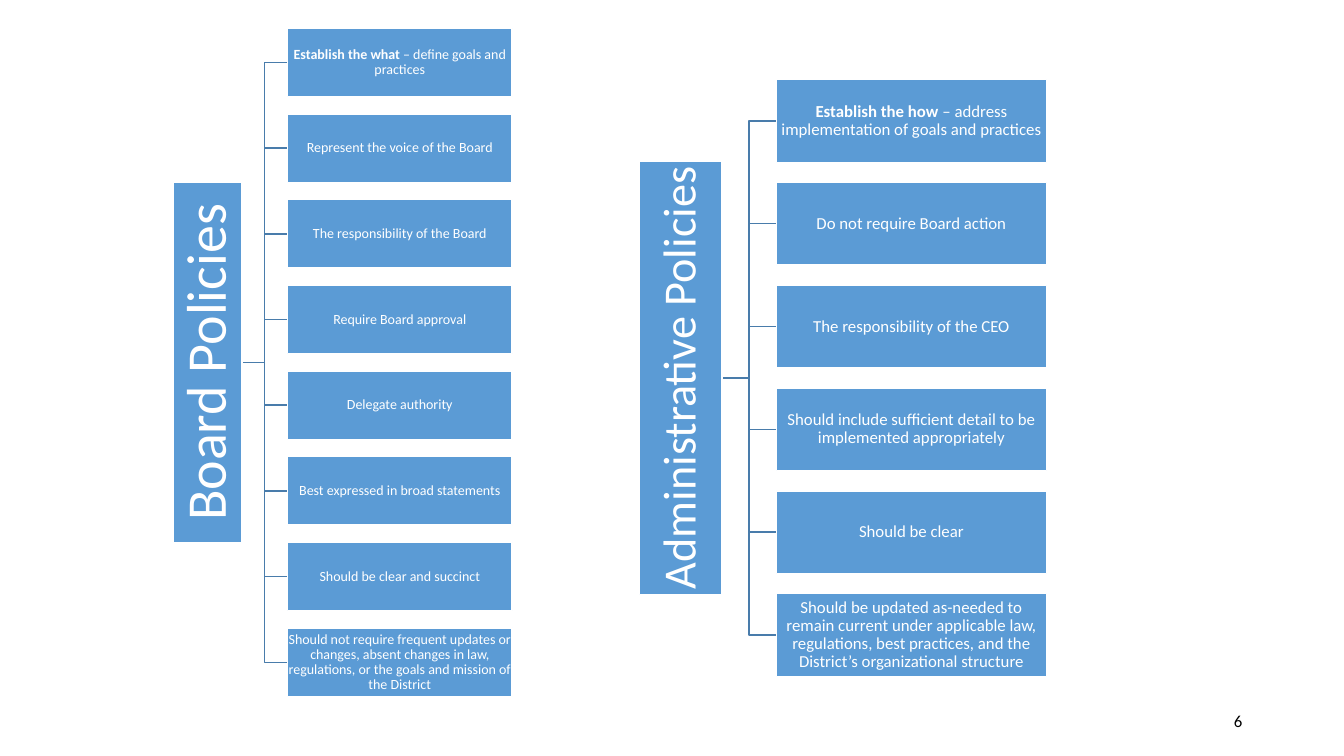
"""Build a slide with two horizontal trees comparing board and administrative policies."""
from dataclasses import dataclass

import pptx
import pptx.dml.color
import pptx.enum.shapes
import pptx.enum.text
import pptx.util

Inches = pptx.util.Inches
COLORS = {"box": "5B9BD5", "branch": "497CAB", "light": "FFFFFF", "dark": "000000"}
FONT = "Calibri"


@dataclass
class Tree:
    title: str
    title_size: int
    title_length: float
    title_inset: float
    title_right: float
    left: float
    top: float
    width: float
    height: float
    pitch: float
    text_size: int
    items: list[tuple[str, str]]


TREES = [
    Tree("Board Policies", 40, 3.58, 0.03, 2.4, 2.85, 0.28, 2.23, 0.68, 0.85, 10, [
        ("Establish the what", " – define goals and practices"),
        ("", "Represent the voice of the Board"),
        ("", "The responsibility of the Board"),
        ("", "Require Board approval"),
        ("", "Delegate authority"),
        ("", "Best expressed in broad statements"),
        ("", "Should be clear and succinct"),
        ("", "Should not require frequent updates or changes, absent changes in law, "
             "regulations, or the goals and mission of the District"),
    ]),
    Tree("Administrative Policies", 33, 4.3, 0.02, 7.16, 7.7, 0.79, 2.68, 0.82, 1.02, 12, [
        ("Establish the how", " – address implementation of goals and practices"),
        ("", "Do not require Board action"),
        ("", "The responsibility of the CEO"),
        ("", "Should include sufficient detail to be implemented appropriately"),
        ("", "Should be clear"),
        ("", "Should be updated as-needed to remain current under applicable law, "
             "regulations, best practices, and the District’s organizational structure"),
    ]),
]


def rgb(name: str) -> pptx.dml.color.RGBColor:
    return pptx.dml.color.RGBColor.from_string(COLORS[name])


def set_line(shape, color: str) -> None:
    shape.line.color.rgb = rgb(color)
    shape.line.width = pptx.util.Pt(1)


def write(shape, bold: str, plain: str, size: int, color: str,
          align: pptx.enum.text.PP_ALIGN) -> None:
    frame = shape.text_frame
    frame.word_wrap = True
    frame.vertical_anchor = pptx.enum.text.MSO_ANCHOR.MIDDLE
    para = frame.paragraphs[0]
    para.alignment = align
    for text, is_bold in ((bold, True), (plain, False)):
        if text:
            span = para.add_run()
            span.text = text
            span.font.color.rgb = rgb(color)
            style = {"name": FONT, "size": pptx.util.Pt(size), "bold": is_bold}
            for key, value in style.items():
                setattr(span.font, key, value)


def add_box(page, left: float, top: float, width: float, height: float, bold: str,
            plain: str, size: int, inset: float, rotation: int = 0) -> None:
    box = page.shapes.add_shape(pptx.enum.shapes.MSO_SHAPE.RECTANGLE, Inches(left),
                                Inches(top), Inches(width), Inches(height))
    box.shadow.inherit = False
    box.rotation = rotation
    box.fill.solid()
    box.fill.fore_color.rgb = rgb("box")
    set_line(box, "light")
    for side in ("left", "top", "right", "bottom"):
        setattr(box.text_frame, f"margin_{side}", Inches(inset))
    write(box, bold, plain, size, "light", pptx.enum.text.PP_ALIGN.CENTER)
    box.text_frame.paragraphs[0].line_spacing = 0.9


def add_branch(page, left: float, right: float, start: float, end: float) -> None:
    middle = (left + right) / 2
    builder = page.shapes.build_freeform(Inches(left), Inches(start))
    corners = [(middle, start), (middle, end), (right, end)]
    builder.add_line_segments([(Inches(x), Inches(y)) for x, y in corners], close=False)
    branch = builder.convert_to_shape()
    branch.shadow.inherit = False
    branch.fill.background()
    set_line(branch, "branch")


def add_tree(page, tree: Tree) -> None:
    tops = [tree.top + row * tree.pitch for row in range(len(tree.items))]
    center = (tops[0] + tops[-1] + tree.height) / 2
    for top in reversed(tops):
        add_branch(page, tree.title_right, tree.left, center, top + tree.height / 2)
    add_box(page, tree.title_right - (tree.height + tree.title_length) / 2,
            center - tree.height / 2, tree.title_length, tree.height, "", tree.title,
            tree.title_size, tree.title_inset, 270)
    for top, (bold, plain) in zip(tops, tree.items):
        add_box(page, tree.left, top, tree.width, tree.height, bold, plain,
                tree.text_size, 0.01)


def main() -> None:
    deck = pptx.Presentation()
    deck.slide_width, deck.slide_height = Inches(13.33), Inches(7.5)
    page = deck.slides.add_slide(deck.slide_layouts[6])
    for tree in TREES:
        add_tree(page, tree)
    number = page.shapes.add_textbox(Inches(9.42), Inches(6.95), Inches(3), Inches(0.4))
    write(number, "", "6", 12, "dark", pptx.enum.text.PP_ALIGN.RIGHT)
    deck.save("out.pptx")


if __name__ == "__main__":
    main()
